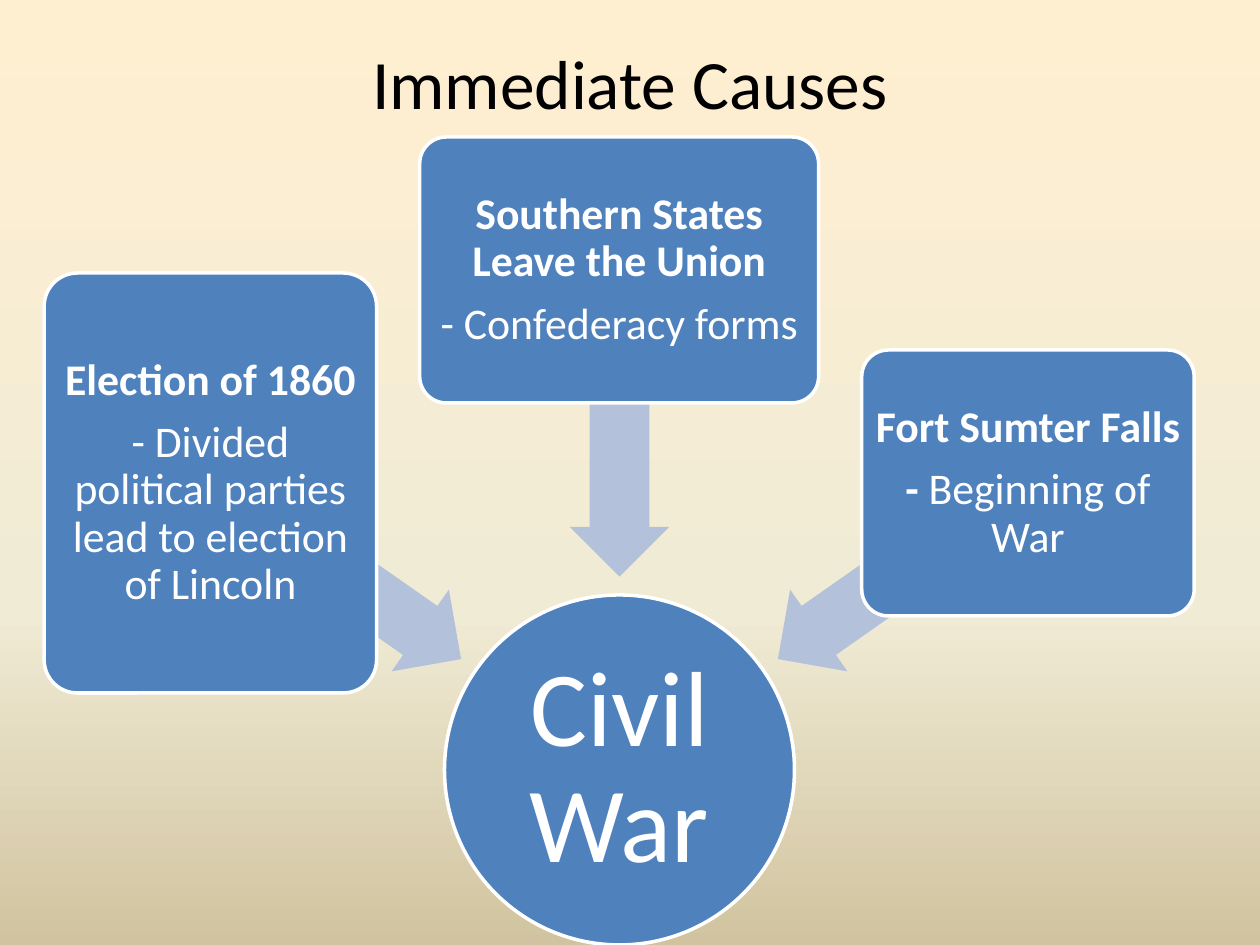
"""Build the Immediate Causes slide: three events converging on the Civil War."""
from copy import deepcopy
from dataclasses import dataclass
from math import cos, radians, sin

from pptx import Presentation
from pptx.dml.color import RGBColor
from pptx.enum import shapes, text
from pptx.oxml.ns import qn
from pptx.util import Pt


@dataclass(frozen=True)
class Theme:
    font: str = "Calibri"
    title_size: float = 39.6
    hub_size: float = 61
    cause_size: float = 25
    ink: str = "000000"
    white: str = "FFFFFF"
    blue: str = "4F81BD"
    arrow: str = "B3C1DB"
    backdrop: tuple = ((0, "FFEFD1"), (0.65, "F0EBD5"), (1, "D1C39F"))


THEME = Theme()
TITLE = "Immediate Causes"
OUTCOME = "Civil War"
# Each cause: arrow angle, card box, then paragraphs of (wording, bold) runs.
CAUSES = [
    (215, (25.2, 156, 190, 240), [
        [("Election of 1860", True)],
        [("- Divided political parties lead to election of Lincoln", False)]]),
    (270, (239.8, 78.3, 228, 152), [
        [("Southern States Leave the Union", True)],
        [("- Confederacy forms", False)]]),
    (325, (492.4, 200, 190, 152), [
        [("Fort Sumter Falls ", True)],
        [("- ", True), ("Beginning of War", False)]]),
]
HUB_X, HUB_Y, HUB_SIZE = 354, 440, 200
ARROW_REACH, ARROW_LENGTH, ARROW_WIDTH = 198, 175, 57


def paint_background(slide):
    fill = slide.background.fill
    fill.gradient()
    fill.gradient_angle = 270
    stops = next(slide.element.iter(qn("a:gsLst")))
    stops.insert(1, deepcopy(stops[0]))
    for stop, (position, color) in zip(fill.gradient_stops, THEME.backdrop):
        stop.position = position
        stop.color.rgb = RGBColor.from_string(color)


def write(shape, paragraphs, size, color, inset, line_spacing=1, space_after=0):
    frame = shape.text_frame
    frame.word_wrap = True
    frame.vertical_anchor = text.MSO_ANCHOR.MIDDLE
    frame.margin_left = frame.margin_right = Pt(inset)
    frame.margin_top = frame.margin_bottom = Pt(inset)
    for index, runs in enumerate(paragraphs):
        paragraph = frame.add_paragraph() if index else frame.paragraphs[0]
        paragraph.alignment = text.PP_ALIGN.CENTER
        paragraph.line_spacing = line_spacing
        paragraph.space_after = Pt(space_after)
        for wording, bold in runs:
            run = paragraph.add_run()
            run.text = wording
            run.font.name = THEME.font
            run.font.size = Pt(size)
            run.font.bold = bold
            run.font.color.rgb = RGBColor.from_string(color)


def add_form(slide, kind, box, color, outlined=True):
    form = slide.shapes.add_shape(kind, *map(Pt, box))
    form.shadow.inherit = False
    form.fill.solid()
    form.fill.fore_color.rgb = RGBColor.from_string(color)
    if outlined:
        form.line.color.rgb = RGBColor.from_string(THEME.white)
        form.line.width = Pt(2)
    else:
        form.line.fill.background()
    return form


def add_arrow(slide, angle):
    x = HUB_X + ARROW_REACH * cos(radians(angle))
    y = HUB_Y + ARROW_REACH * sin(radians(angle))
    box = (x - ARROW_LENGTH / 2, y - ARROW_WIDTH / 2, ARROW_LENGTH, ARROW_WIDTH)
    arrow = add_form(slide, shapes.MSO_SHAPE.LEFT_ARROW, box, THEME.arrow, outlined=False)
    arrow.adjustments[0] = 0.6
    arrow.adjustments[1] = 0.5
    arrow.rotation = angle


def add_cause(slide, box, paragraphs):
    card = add_form(slide, shapes.MSO_SHAPE.ROUNDED_RECTANGLE, box, THEME.blue)
    card.adjustments[0] = 0.1
    write(card, paragraphs, THEME.cause_size, THEME.white, 3.6, 0.9, THEME.cause_size * 0.35)


def main():
    deck = Presentation()
    deck.slide_width, deck.slide_height = Pt(720), Pt(540)
    slide = deck.slides.add_slide(deck.slide_layouts[6])
    paint_background(slide)

    title = slide.shapes.add_textbox(Pt(36), Pt(21.6), Pt(648), Pt(50.4))
    write(title, [[(TITLE, False)]], THEME.title_size, THEME.ink, 3.6)

    hub_box = (HUB_X - HUB_SIZE / 2, HUB_Y - HUB_SIZE / 2, HUB_SIZE, HUB_SIZE)
    hub = add_form(slide, shapes.MSO_SHAPE.OVAL, hub_box, THEME.blue)
    write(hub, [[(OUTCOME, False)]], THEME.hub_size, THEME.white, 3, 0.9, THEME.hub_size * 0.35)

    for angle, box, paragraphs in CAUSES:
        add_arrow(slide, angle)
        add_cause(slide, box, paragraphs)
    deck.save("out.pptx")


if __name__ == "__main__":
    main()
